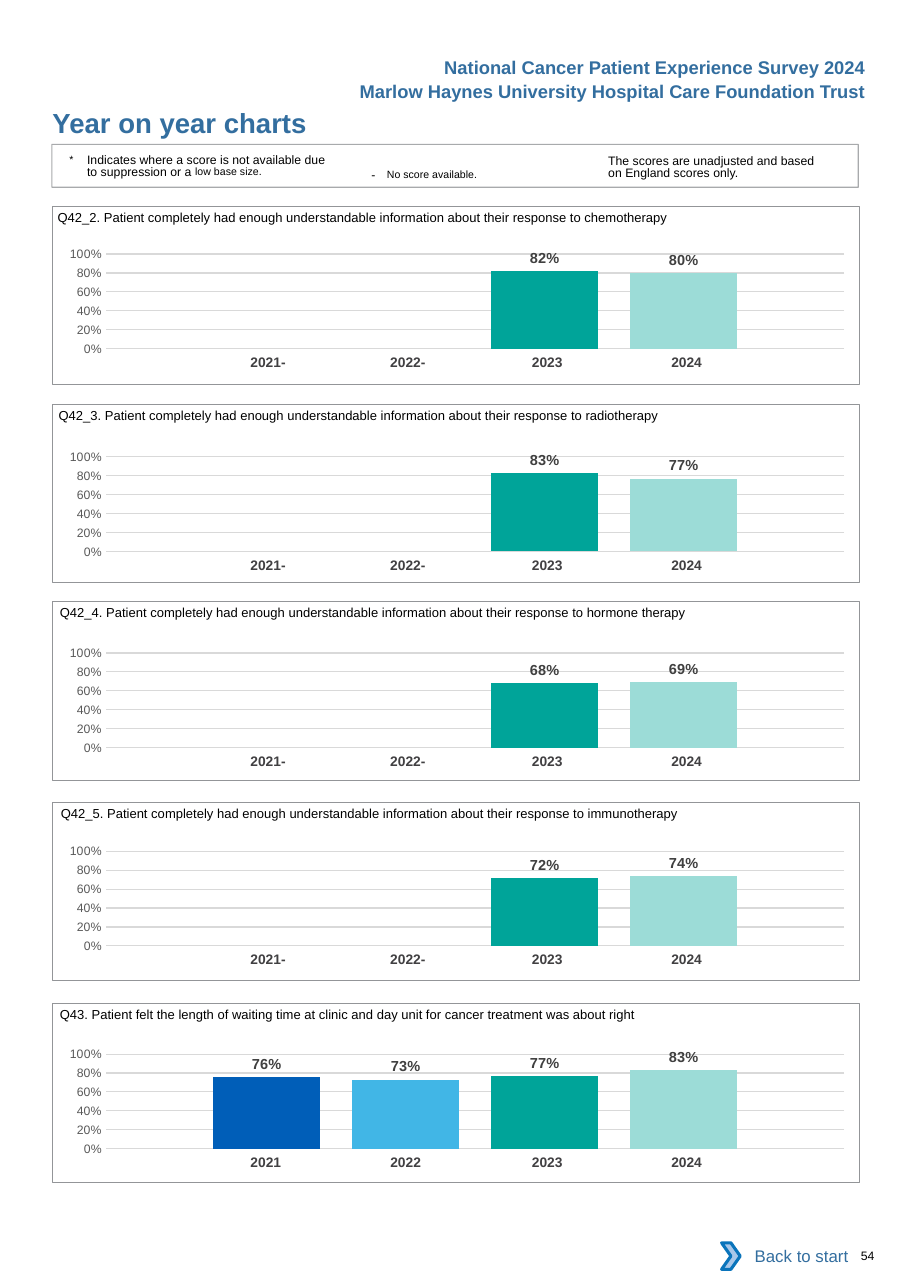
import pptx
import pptx.chart.data
import pptx.dml.color
import pptx.enum.chart
import pptx.enum.shapes
import pptx.enum.text
import pptx.oxml
import pptx.oxml.ns
import pptx.util

Pt = pptx.util.Pt
RGBColor = pptx.dml.color.RGBColor
ALIGN = pptx.enum.text.PP_ALIGN
ANCHOR = pptx.enum.text.MSO_ANCHOR
SHAPE = pptx.enum.shapes.MSO_SHAPE

BLACK = RGBColor(0x00, 0x00, 0x00)
WHITE = RGBColor(0xFF, 0xFF, 0xFF)
HEADING_BLUE = RGBColor(0x33, 0x6E, 0x9F)
FRAME_GREY = RGBColor(0x93, 0x95, 0x98)
YEAR_GREY = RGBColor(0x41, 0x40, 0x42)
LABEL_GREY = RGBColor(0x40, 0x40, 0x40)
AXIS_GREY = RGBColor(0x59, 0x59, 0x59)
GRID_GREY = RGBColor(0xD9, 0xD9, 0xD9)
ARROW_FILL = RGBColor(0xA8, 0xC7, 0xE9)
ARROW_LINE = RGBColor(0x0A, 0x74, 0xBB)
YEAR_COLORS = (RGBColor(0x00, 0x5E, 0xB8), RGBColor(0x41, 0xB6, 0xE6),
               RGBColor(0x00, 0xA4, 0x99), RGBColor(0x9C, 0xDC, 0xD7))

YEARS = ("2021", "2022", "2023", "2024")
YEAR_WIDTHS = (91.4, 91.4, 96.5, 91.4)
YEAR_RIGHT_MARGINS = (0, 0, 2.9, 8.6)
UNDERSTANDABLE = "Patient completely had enough understandable information about their response to "
PANELS = (
    (134.6, 3.2, 18, "Q42_2. " + UNDERSTANDABLE + "chemotherapy", (None, None, 0.82, 0.80)),
    (264.2, 3.9, 20.9, "Q42_3. " + UNDERSTANDABLE + "radiotherapy", (None, None, 0.83, 0.77)),
    (393.1, 4.7, 20.2, "Q42_4. " + UNDERSTANDABLE + "hormone therapy", (None, None, 0.68, 0.69)),
    (524.2, 5.3, 18.7, "Q42_5. " + UNDERSTANDABLE + "immunotherapy", (None, None, 0.72, 0.74)),
    (655.9, 4.7, 19.5, "Q43. Patient felt the length of waiting time at clinic and day unit "
     "for cancer treatment was about right", (0.76, 0.73, 0.77, 0.83)),
)

NOTE_FONT = dict(name="Arial", size=Pt(8))
RAISED_FONT = dict(name="Arial", size=Pt(12))
NOTE_LINES = dict(line_spacing=Pt(8.1))


def apply_formats(target, formats):
    for name, value in formats.items():
        setattr(target, name, value)


def format_font(font, color, **formats):
    apply_formats(font, dict(name="Arial") | formats)
    font.color.rgb = color


def add_run(paragraph, text, color=BLACK, marks=None, **formats):
    run = paragraph.add_run()
    run.text = text
    format_font(run.font, color, **formats)
    for name, value in (marks or {}).items():
        run.font._element.set(name, value)


def clear_margins(text_frame, **formats):
    apply_formats(text_frame, dict(margin_left=0, margin_top=0, margin_right=0,
                                   margin_bottom=0, word_wrap=True) | formats)


def add_text_box(slide, left, top, width, height, **formats):
    text_frame = slide.shapes.add_textbox(Pt(left), Pt(top), Pt(width), Pt(height)).text_frame
    clear_margins(text_frame, **formats)
    return text_frame.paragraphs[0]


def add_shape(slide, kind, left, top, width, height, fill=None, line=None, line_width=0.5):
    shape = slide.shapes.add_shape(kind, Pt(left), Pt(top), Pt(width), Pt(height))
    shape.shadow.inherit = False
    if fill is None:
        shape.fill.background()
    else:
        shape.fill.solid()
        shape.fill.fore_color.rgb = fill
    if line is None:
        shape.line.fill.background()
    else:
        shape.line.color.rgb = line
        shape.line.width = Pt(line_width)
    return shape


def add_header(slide, left, top, width):
    lines = ("National Cancer Patient Experience Survey 2024",
             "Marlow Haynes University Hospital Care Foundation Trust")
    for index, text in enumerate(lines):
        paragraph = add_text_box(slide, left + 160, top + 3.6 + 16 * index, width - 160, 18)
        paragraph.alignment = ALIGN.RIGHT
        add_run(paragraph, text, HEADING_BLUE, size=Pt(12), bold=True)
    title = slide.shapes.title
    apply_formats(title, dict(left=Pt(left), top=Pt(top + 36), width=Pt(324), height=Pt(21.6)))
    clear_margins(title.text_frame, vertical_anchor=ANCHOR.TOP)
    paragraph = title.text_frame.paragraphs[0]
    paragraph.alignment = ALIGN.LEFT
    add_run(paragraph, "Year on year charts", HEADING_BLUE, size=Pt(18), bold=True)


def add_notes_box(slide, left, top, width, height):
    frame = add_shape(slide, SHAPE.RECTANGLE, left, top, width, height, line=FRAME_GREY,
                      line_width=0.75)
    color = frame.line._ln.find(".//" + pptx.oxml.ns.qn("a:srgbClr"))
    color.append(pptx.oxml.parse_xml(
        f'<a:alpha {pptx.oxml.ns.nsdecls("a")} val="80000"/>'))

    paragraph = add_text_box(slide, left + 11.5, top + 5, 173, 25, margin_top=Pt(2.2))
    apply_formats(paragraph, NOTE_LINES)
    properties = paragraph._p.get_or_add_pPr()
    properties.set("marL", str(Pt(11.5)))
    properties.set("indent", str(Pt(-11.5)))
    add_run(paragraph, "*\t", marks={"baseline": "3000"}, **RAISED_FONT)
    add_run(paragraph, "Indicates where a score is not available due to suppression or a ",
            **NOTE_FONT)
    add_run(paragraph, "low base size.", marks={"baseline": "7000"}, **RAISED_FONT)

    paragraph = add_text_box(slide, left + 208.8, top + 10.8, 120, 15)
    add_run(paragraph, "- ", marks={"spc": "260"}, **NOTE_FONT)
    add_run(paragraph, "No score available.", marks={"baseline": "3000"}, **RAISED_FONT)

    paragraph = add_text_box(slide, left + 363.6, top + 5, 141, 20, margin_top=Pt(2.2))
    apply_formats(paragraph, NOTE_LINES)
    add_run(paragraph, "The scores are unadjusted and based on England scores only.",
            **NOTE_FONT)


def add_year_table(slide, left, top, scores):
    table = slide.shapes.add_table(1, len(YEARS), Pt(left), Pt(top), Pt(sum(YEAR_WIDTHS)),
                                   Pt(19.4)).table
    apply_formats(table, dict(first_row=False, horz_banding=False))
    for index, (year, score) in enumerate(zip(YEARS, scores)):
        table.columns[index].width = Pt(YEAR_WIDTHS[index])
        cell = table.cell(0, index)
        cell.fill.background()
        apply_formats(cell, dict(margin_left=Pt(10.1 if score is None else 7.2),
                                 margin_right=Pt(YEAR_RIGHT_MARGINS[index]),
                                 margin_top=Pt(3.6), margin_bottom=Pt(3.6)))
        paragraph = cell.text_frame.paragraphs[0]
        paragraph.alignment = ALIGN.CENTER
        add_run(paragraph, year + ("-" if score is None else ""), YEAR_GREY, size=Pt(9),
                bold=True)


def add_score_chart(slide, left, top, width, height, scores):
    data = pptx.chart.data.CategoryChartData()
    data.categories = ["1"]
    for index, score in enumerate(scores):
        data.add_series(f"Series {index + 1}", [score])
    chart = slide.shapes.add_chart(pptx.enum.chart.XL_CHART_TYPE.COLUMN_CLUSTERED, Pt(left),
                                   Pt(top), Pt(width), Pt(height), data).chart
    apply_formats(chart, dict(has_legend=False, has_title=False))
    format_font(chart.font, BLACK, name="Calibri", size=Pt(10))
    chart.category_axis.visible = False
    axis = chart.value_axis
    apply_formats(axis, dict(minimum_scale=0, maximum_scale=1, major_unit=0.2,
                             major_tick_mark=pptx.enum.chart.XL_TICK_MARK.NONE))
    apply_formats(axis.tick_labels, dict(number_format="0%", number_format_is_linked=False))
    format_font(axis.tick_labels.font, AXIS_GREY, size=Pt(8))
    axis.format.line.fill.background()
    axis.major_gridlines.format.line.color.rgb = GRID_GREY
    axis.major_gridlines.format.line.width = Pt(0.75)
    plot = chart.plots[0]
    apply_formats(plot, dict(gap_width=200, overlap=-30, vary_by_categories=False))
    for series, color in zip(plot.series, YEAR_COLORS):
        series.format.fill.solid()
        series.format.fill.fore_color.rgb = color
        labels = series.data_labels
        apply_formats(labels, dict(show_value=True, number_format="0%",
                                   number_format_is_linked=False,
                                   position=pptx.enum.chart.XL_LABEL_POSITION.OUTSIDE_END))
        format_font(labels.font, LABEL_GREY, size=Pt(9.5), bold=True)
    plot_area = chart._chartSpace.chart.plotArea
    for layout in plot_area.findall(pptx.oxml.ns.qn("c:layout")):
        plot_area.remove(layout)
    plot_area.insert(0, pptx.oxml.parse_xml(
        f'<c:layout {pptx.oxml.ns.nsdecls("c")}><c:manualLayout><c:layoutTarget val="inner"/>'
        '<c:xMode val="edge"/><c:yMode val="edge"/><c:x val="0.079"/><c:y val="0.145"/>'
        '<c:w val="0.915"/><c:h val="0.666"/></c:manualLayout></c:layout>'))


def add_panel(slide, left, top, width, height, question_offset, chart_offset, question, scores):
    add_year_table(slide, left + 90, top + chart_offset + 75.9, scores)
    add_score_chart(slide, left - 6.5, top + chart_offset, width, 92.9, scores)
    add_shape(slide, SHAPE.RECTANGLE, left, top, width, height, line=FRAME_GREY)
    paragraph = add_text_box(slide, left + question_offset, top - 4.5, width - 8, 17.3,
                             margin_top=Pt(6.5))
    add_run(paragraph, question, size=Pt(8.5))


def add_footer(slide, left, top, width, height):
    button = add_shape(slide, SHAPE.RECTANGLE, left + 5, top, width - 5, height, fill=WHITE)
    button.text_frame.vertical_anchor = ANCHOR.MIDDLE
    paragraph = button.text_frame.paragraphs[0]
    paragraph.alignment = ALIGN.RIGHT
    add_run(paragraph, "Back to start", HEADING_BLUE, size=Pt(11))
    add_shape(slide, SHAPE.CHEVRON, left, top + 6.5, 12.2, 17.3, fill=ARROW_FILL,
              line=ARROW_LINE, line_width=2)
    add_run(add_text_box(slide, left + width + 1, top + 10, 28, 9.4), "54", size=Pt(8))


def main():
    presentation = pptx.Presentation()
    apply_formats(presentation, dict(slide_width=Pt(594.7), slide_height=Pt(841.7)))
    slide = presentation.slides.add_slide(presentation.slide_layouts[5])
    add_header(slide, 34.3, 33.1, 531.5)
    add_notes_box(slide, 33.9, 94.3, 527, 28.1)
    for top, question_offset, chart_offset, question, scores in PANELS:
        add_panel(slide, 34.4, top, 527, 116.6, question_offset, chart_offset, question, scores)
    add_footer(slide, 471.6, 805.7, 90, 30.2)
    presentation.save("out.pptx")


if __name__ == "__main__":
    main()
